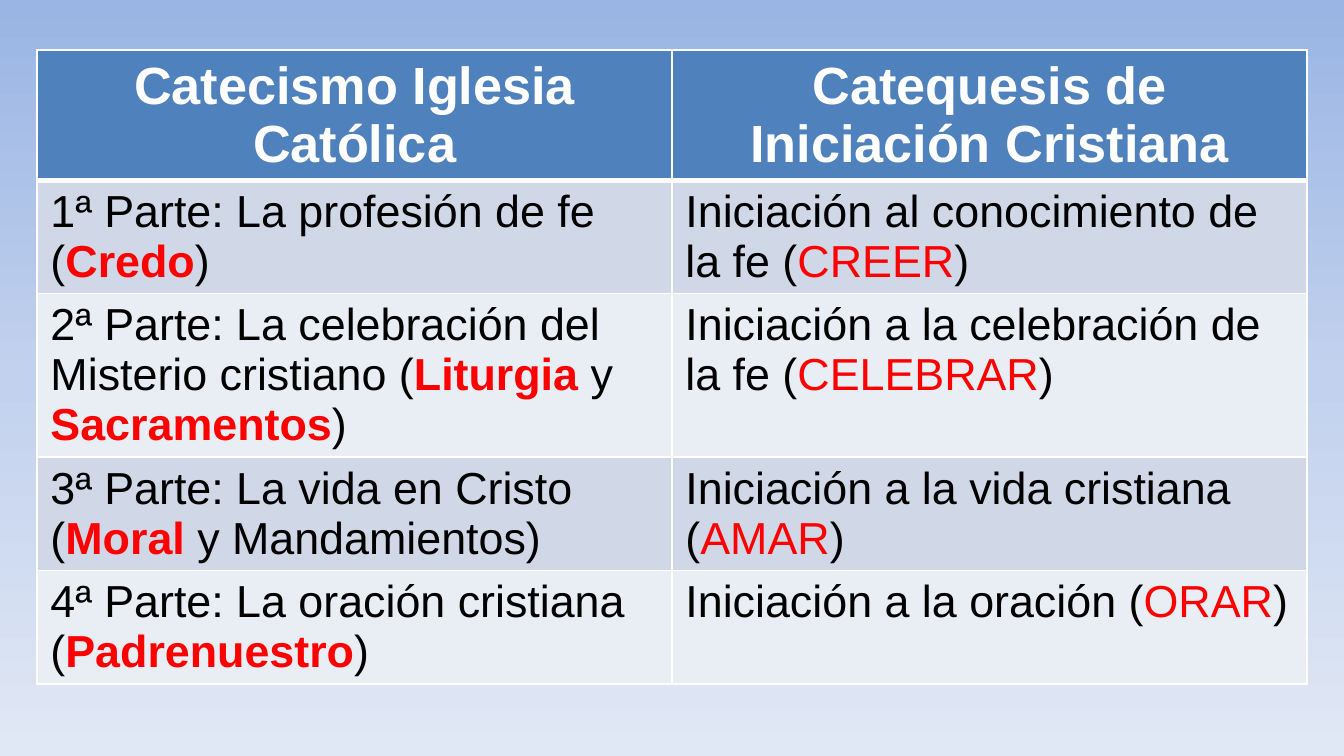
from copy import deepcopy

from lxml import etree
from pptx import Presentation
from pptx.dml.color import RGBColor
from pptx.enum.text import PP_ALIGN
from pptx.oxml.ns import qn
from pptx.util import Cm, Pt

CENTER = PP_ALIGN.CENTER
LEFT = PP_ALIGN.LEFT
BLANK_LAYOUT = 6

COLORS = {
    "sky_top": "9AB5E4",
    "sky_middle": "C2D1ED",
    "sky_bottom": "E1E8F5",
    "header": "4F81BD",
    "odd_row": "D0D8E8",
    "even_row": "E9EDF4",
    "white": "FFFFFF",
    "black": "000000",
    "red": "FF0000",
}

HEADINGS = ["Catecismo Iglesia Católica", "Catequesis de\nIniciación Cristiana"]
PARTS = [
    ["1ª Parte: La profesión de fe (*Credo*)",
     "Iniciación al conocimiento de la fe (*CREER*)"],
    ["2ª Parte: La celebración del Misterio cristiano (*Liturgia* y *Sacramentos*)",
     "Iniciación a la celebración de la fe (*CELEBRAR*)"],
    ["3ª Parte: La vida en Cristo (*Moral* y Mandamientos)",
     "Iniciación a la vida cristiana (*AMAR*)"],
    ["4ª Parte: La oración cristiana (*Padrenuestro*)",
     "Iniciación a la oración (*ORAR*)"],
]
ROW_HEIGHTS = [2.45, 2.13, 3.09, 2.13, 2.13]


def style_run(run, size, color, bold):
    run.font.name = "Arial"
    run.font.size = Pt(size)
    run.font.bold = bold
    run.font.color.rgb = RGBColor.from_string(COLORS[color])


def style_cell(cell, fill, bottom_width):
    properties = cell._tc.get_or_add_tcPr()
    for side in ("lnL", "lnR", "lnT", "lnB"):
        width = bottom_width if side == "lnB" else 1
        border = etree.SubElement(properties, qn(f"a:{side}"), w=str(Pt(width)))
        solid = etree.SubElement(border, qn("a:solidFill"))
        etree.SubElement(solid, qn("a:srgbClr"), val=COLORS["white"])
    cell.fill.solid()
    cell.fill.fore_color.rgb = RGBColor.from_string(COLORS[fill])


prs = Presentation()
prs.slide_width = Cm(25.4)
prs.slide_height = Cm(14.29)
slide = prs.slides.add_slide(prs.slide_layouts[BLANK_LAYOUT])

sky = slide.background.fill
sky.gradient()
sky.gradient_angle = 270
stop_list = slide.element.find(".//" + qn("a:gsLst"))
stop_list.insert(1, deepcopy(stop_list[0]))
sky_stops = zip(sky.gradient_stops, ["sky_top", "sky_middle", "sky_bottom"], [0, 0.5, 1])
for stop, color, position in sky_stops:
    stop.color.rgb = RGBColor.from_string(COLORS[color])
    stop.position = position

comparison = slide.shapes.add_table(
    len(ROW_HEIGHTS), len(HEADINGS), Cm(0.7), Cm(0.95), Cm(24), Cm(sum(ROW_HEIGHTS))
).table
for row, height in zip(comparison.rows, ROW_HEIGHTS):
    row.height = Cm(height)

for column, heading in enumerate(HEADINGS):
    cell = comparison.cell(0, column)
    style_cell(cell, "header", 3)
    cell.text_frame.text = heading
    for paragraph in cell.text_frame.paragraphs:
        paragraph.alignment = CENTER
        style_run(paragraph.runs[0], 28, "white", True)

for row_number, part in enumerate(PARTS, start=1):
    for column, sentence in enumerate(part):
        cell = comparison.cell(row_number, column)
        style_cell(cell, "odd_row" if row_number % 2 else "even_row", 1)
        paragraph = cell.text_frame.paragraphs[0]
        paragraph.alignment = LEFT
        for index, piece in enumerate(sentence.split("*")):
            keyword = index % 2 == 1
            run = paragraph.add_run()
            run.text = piece
            style_run(run, 24, "red" if keyword else "black", keyword and column == 0)

prs.save("out.pptx")
